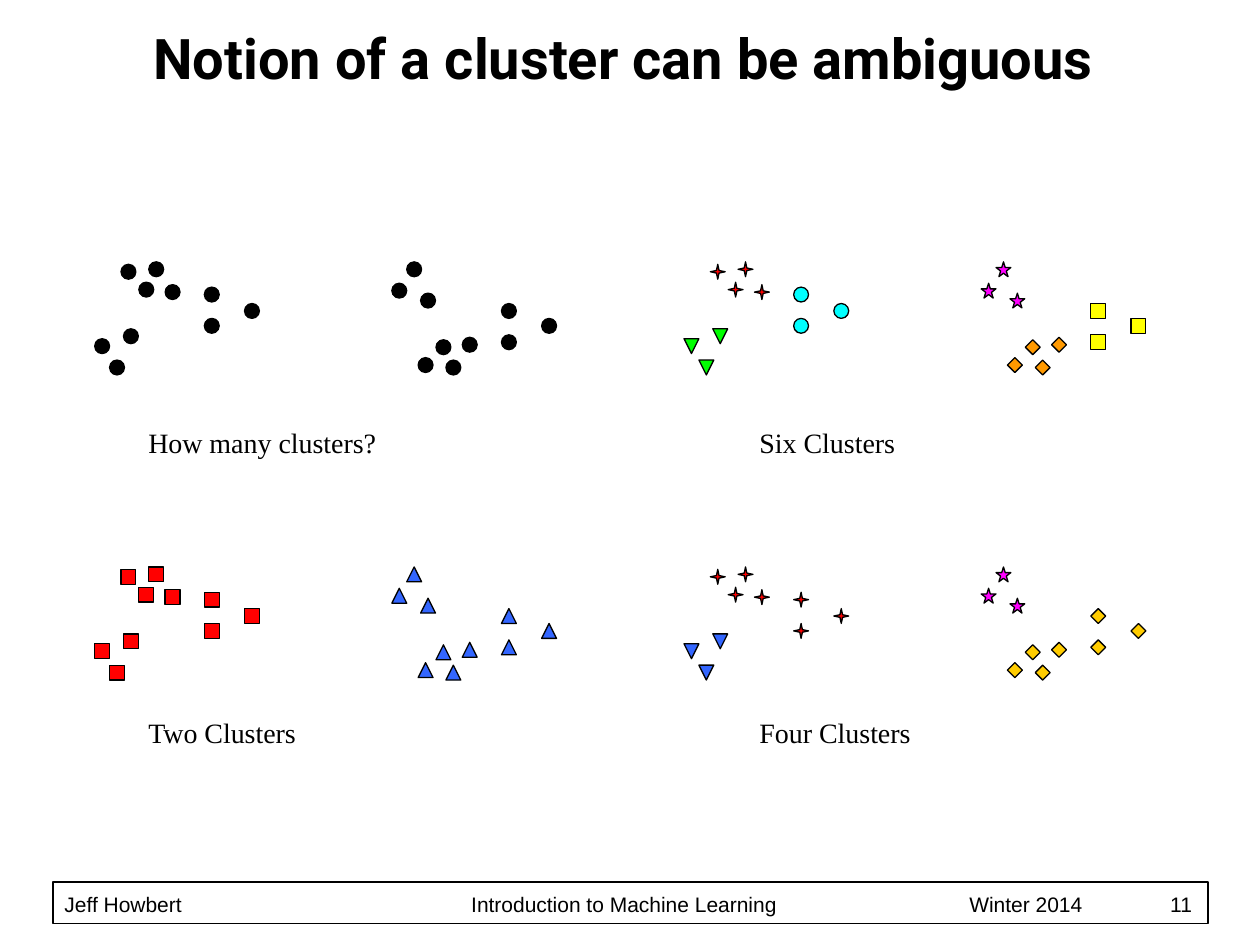
from pptx import Presentation
from pptx.dml.color import RGBColor
from pptx.enum.shapes import MSO_SHAPE
from pptx.enum.text import MSO_ANCHOR, MSO_AUTO_SIZE, PP_ALIGN
from pptx.oxml.ns import qn
from pptx.util import Cm, Pt
from lxml import etree

BLACK = RGBColor(0x00, 0x00, 0x00)
WHITE = RGBColor(0xFF, 0xFF, 0xFF)
RED = RGBColor(0xFF, 0x00, 0x00)
BLUE = RGBColor(0x33, 0x66, 0xFF)
GREEN = RGBColor(0x00, 0xFF, 0x00)
CYAN = RGBColor(0x00, 0xFF, 0xFF)
MAGENTA = RGBColor(0xFF, 0x00, 0xFF)
ORANGE = RGBColor(0xFF, 0x99, 0x00)
GOLD = RGBColor(0xFF, 0xCC, 0x00)
YELLOW = RGBColor(0xFF, 0xFF, 0x00)

DOT = MSO_SHAPE.OVAL
SQUARE = MSO_SHAPE.RECTANGLE
TRIANGLE = MSO_SHAPE.ISOSCELES_TRIANGLE
EXTRACT = MSO_SHAPE.FLOWCHART_EXTRACT
DIAMOND = MSO_SHAPE.DIAMOND
STAR4 = MSO_SHAPE.STAR_4_POINT
STAR5 = MSO_SHAPE.STAR_5_POINT
BOTTOM = MSO_ANCHOR.BOTTOM
CENTER = PP_ALIGN.CENTER
FIT_SHAPE = MSO_AUTO_SIZE.SHAPE_TO_FIT_TEXT
NO_FIT = MSO_AUTO_SIZE.NONE

# Marker offsets in cm; the second half of a panel is the first one
# shifted right and mirrored top to bottom.
FOUR = [(1.42, 0.46), (0.53, 0.05), (1.09, 0), (0.89, 0.41)]
THREE_LOW = [(0.58, 1.35), (0, 1.55), (0.3, 1.98)]
THREE_RIGHT = [(2.21, 0.51), (3.02, 0.84), (2.21, 1.14)]
BLOBS = [FOUR, THREE_LOW, THREE_RIGHT]
HALF_SHIFT, PLOT_HEIGHT = 5.99, 1.98
MARKER = 0.3

# Per panel: caption, plot corner, caption corner, then the marker style
# of each blob in the left and the right half.
PANELS = [
    ("How many clusters?", (1.91, 5.28), (2.74, 8.46),
     [(DOT, BLACK)] * 3, [(DOT, BLACK)] * 3),
    ("Four Clusters", (13.79, 11.43), (15.06, 14.3),
     [(STAR4, RED), (EXTRACT, BLUE), (STAR4, RED)],
     [(DIAMOND, GOLD), (STAR5, MAGENTA), (DIAMOND, GOLD)]),
    ("Two Clusters", (1.91, 11.43), (2.74, 14.3),
     [(SQUARE, RED)] * 3, [(TRIANGLE, BLUE)] * 3),
    ("Six Clusters", (13.79, 5.28), (15.06, 8.46),
     [(STAR4, RED), (TRIANGLE, GREEN), (DOT, CYAN)],
     [(DIAMOND, ORANGE), (STAR5, MAGENTA), (SQUARE, YELLOW)]),
]


def add_outlined(shapes, kind, left, top, width, height, fill, weight):
    sp = shapes.add_shape(kind, Cm(left), Cm(top), Cm(width), Cm(height))
    sp.shadow.inherit = False
    sp.fill.solid()
    sp.fill.fore_color.rgb = fill
    sp.line.color.rgb = BLACK
    sp.line.width = Pt(weight)
    return sp


def set_font(p, name, size, bold=False):
    for r in p.runs:
        r.font.name = name
        r.font.size = Pt(size)
        r.font.bold = bold
        r.font.color.rgb = BLACK


prs = Presentation()
prs.slide_width, prs.slide_height = Cm(25.4), Cm(19.05)
s = prs.slides.add_slide(prs.slide_layouts[5])

# Footer
add_outlined(s.shapes, SQUARE, 1.07, 17.78, 23.29, 0.84, WHITE, 1)
footer = s.shapes.add_textbox(Cm(1.07), Cm(17.78), Cm(23.24), Cm(0.71))
tf = footer.text_frame
tf.word_wrap = True
tf.vertical_anchor = BOTTOM
tf.margin_left = Cm(0.23)
tf.margin_right = tf.margin_top = tf.margin_bottom = 0
p = tf.paragraphs[0]
p.text = "Jeff Howbert\tIntroduction to Machine Learning\tWinter 2014\t11"
tabs = etree.SubElement(p._p.get_or_add_pPr(), qn("a:tabLst"))
for stop in (8.2, 18.24, 22.29):
    etree.SubElement(tabs, qn("a:tab"), pos=str(Cm(stop)), algn="l")
p.line_spacing = Pt(20)
set_font(p, "Arial", 12)

# Title
title = s.shapes.title
title.left, title.top, title.width, title.height = Cm(1.07), Cm(0.43), Cm(23.01), Cm(1.52)
tf = title.text_frame
tf.text = "Notion of a cluster can be ambiguous"
tf.auto_size = NO_FIT
tf.vertical_anchor = BOTTOM
p = tf.paragraphs[0]
p.alignment = CENTER
p.line_spacing = Pt(36)
set_font(p, "Roboto", 32, bold=True)

# Cluster panels
for caption, (x0, y0), (cap_x, cap_y), left_styles, right_styles in PANELS:
    group = s.shapes.add_group_shape()
    for mirrored, styles in ((True, right_styles), (False, left_styles)):
        for blob, (kind, color) in zip(BLOBS, styles):
            for dx, dy in blob:
                x = x0 + dx + (HALF_SHIFT if mirrored else 0)
                y = y0 + (PLOT_HEIGHT - dy if mirrored else dy)
                sp = add_outlined(group.shapes, kind, x, y, MARKER, MARKER, color, 0.75)
                if kind == STAR4:
                    sp.adjustments[0] = 0.125
                if not mirrored:
                    sp._element.spPr.find(qn("a:xfrm")).set("flipV", "1")
    label = group.shapes.add_textbox(Cm(cap_x), Cm(cap_y), Cm(6.35), Cm(0.94))
    tf = label.text_frame
    tf.word_wrap = True
    tf.auto_size = FIT_SHAPE
    tf.text = caption
    set_font(tf.paragraphs[0], "Times New Roman", 16)

prs.save("out.pptx")
